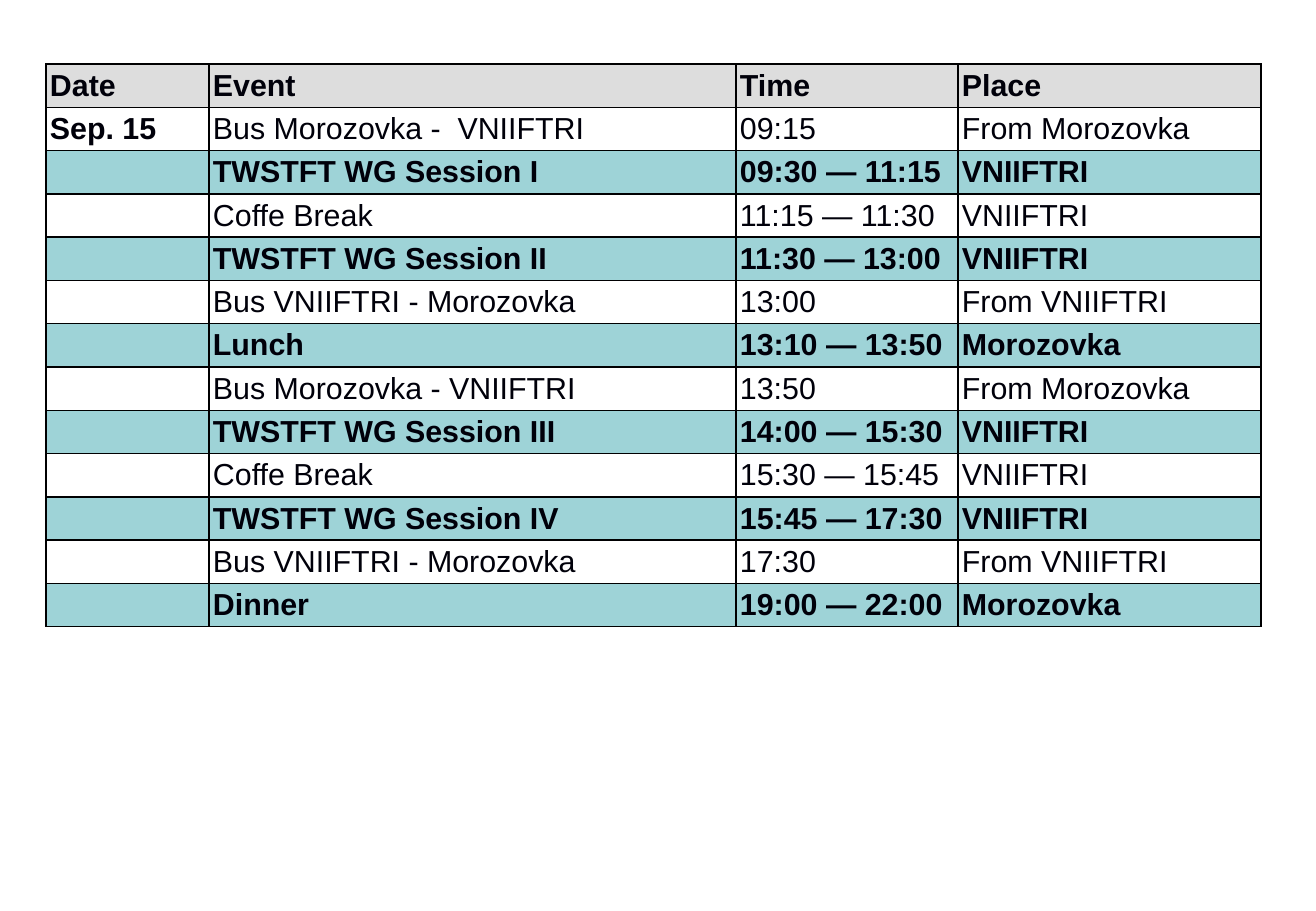
from lxml.etree import SubElement
from pptx import Presentation
from pptx.dml.color import RGBColor as RGB
from pptx.enum.text import MSO_ANCHOR as Anchor
from pptx.oxml.ns import qn
from pptx.util import Emu, Pt

EMU_PER_PX = 914400 / 121.5


def px(length):
    return Emu(round(length * EMU_PER_PX))


def color(hex_code):
    return RGB.from_string(hex_code)


def write(paragraph, text, *, size, font, ink, bold=False):
    if not text:
        # A blank cell keeps the line height of the table font
        blank = SubElement(paragraph._p, qn("a:endParaRPr"), sz=str(size * 100))
        SubElement(blank, qn("a:latin"), typeface=font)
        return
    run = paragraph.add_run()
    run.text = text
    run.font.size, run.font.name, run.font.bold = Pt(size), font, bold
    run.font.color.rgb = color(ink)


class Agenda:
    font, size, ink = "Arial", 18, "00000A"
    line, line_width = "000001", 1
    header_fill, accent_fill = "DDDDDD", "9ED3D7"
    padding = 4

    def __init__(self, slide):
        self.slide = slide

    def border(self, cell):
        properties = cell._tc.get_or_add_tcPr()
        for side in ("lnL", "lnR", "lnT", "lnB"):
            edge = SubElement(properties, qn(f"a:{side}"), w=str(Pt(self.line_width)))
            solid = SubElement(edge, qn("a:solidFill"))
            SubElement(solid, qn("a:srgbClr"), val=self.line)

    def cell(self, cell, text, fill, bold):
        cell.margin_left = cell.margin_right = px(self.padding)
        cell.margin_top = cell.margin_bottom = px(self.padding)
        cell.vertical_anchor = Anchor.MIDDLE
        self.border(cell)
        if fill:
            cell.fill.solid()
            cell.fill.fore_color.rgb = color(fill)
        else:
            cell.fill.background()
        write(cell.text_frame.paragraphs[0], text, size=self.size,
              font=self.font, ink=self.ink, bold=bold)

    def table(self, left, top, widths, height, rows):
        count = len(rows)
        schedule = self.slide.shapes.add_table(
            count, len(widths), px(left), px(top), px(sum(widths)), px(height)).table
        schedule.first_row = schedule.horz_banding = False
        for column, width in zip(schedule.columns, widths):
            column.width = px(width)
        for i, entry in enumerate(rows):
            schedule.rows[i].height = px(height / count)
            # Header first, then every second row is an accented session or meal
            accented = i % 2 == 0
            fill = self.header_fill if i == 0 else self.accent_fill if accented else None
            for j, text in enumerate(entry):
                self.cell(schedule.cell(i, j), text, fill, accented or j == 0)


SCHEDULE = [
    ("Date", "Event", "Time", "Place"),
    ("Sep. 15", "Bus Morozovka -  VNIIFTRI", "09:15", "From Morozovka"),
    ("", "TWSTFT WG Session I", "09:30 — 11:15", "VNIIFTRI"),
    ("", "Coffe Break", "11:15 — 11:30", "VNIIFTRI"),
    ("", "TWSTFT WG Session II", "11:30 — 13:00", "VNIIFTRI"),
    ("", "Bus VNIIFTRI - Morozovka", "13:00", "From VNIIFTRI"),
    ("", "Lunch", "13:10 — 13:50", "Morozovka"),
    ("", "Bus Morozovka - VNIIFTRI", "13:50", "From Morozovka"),
    ("", "TWSTFT WG Session III", "14:00 — 15:30", "VNIIFTRI"),
    ("", "Coffe Break", "15:30 — 15:45", "VNIIFTRI"),
    ("", "TWSTFT WG Session IV", "15:45 — 17:30", "VNIIFTRI"),
    ("", "Bus VNIIFTRI - Morozovka", "17:30", "From VNIIFTRI"),
    ("", "Dinner", "19:00 — 22:00", "Morozovka"),
]


def main():
    deck = Presentation()
    deck.slide_width, deck.slide_height = px(1316), px(911)
    agenda = Agenda(deck.slides.add_slide(deck.slide_layouts[6]))

    # Day schedule
    agenda.table(46, 64, (163, 527, 222, 303), 563, SCHEDULE)
    deck.save("out.pptx")


if __name__ == "__main__":
    main()
